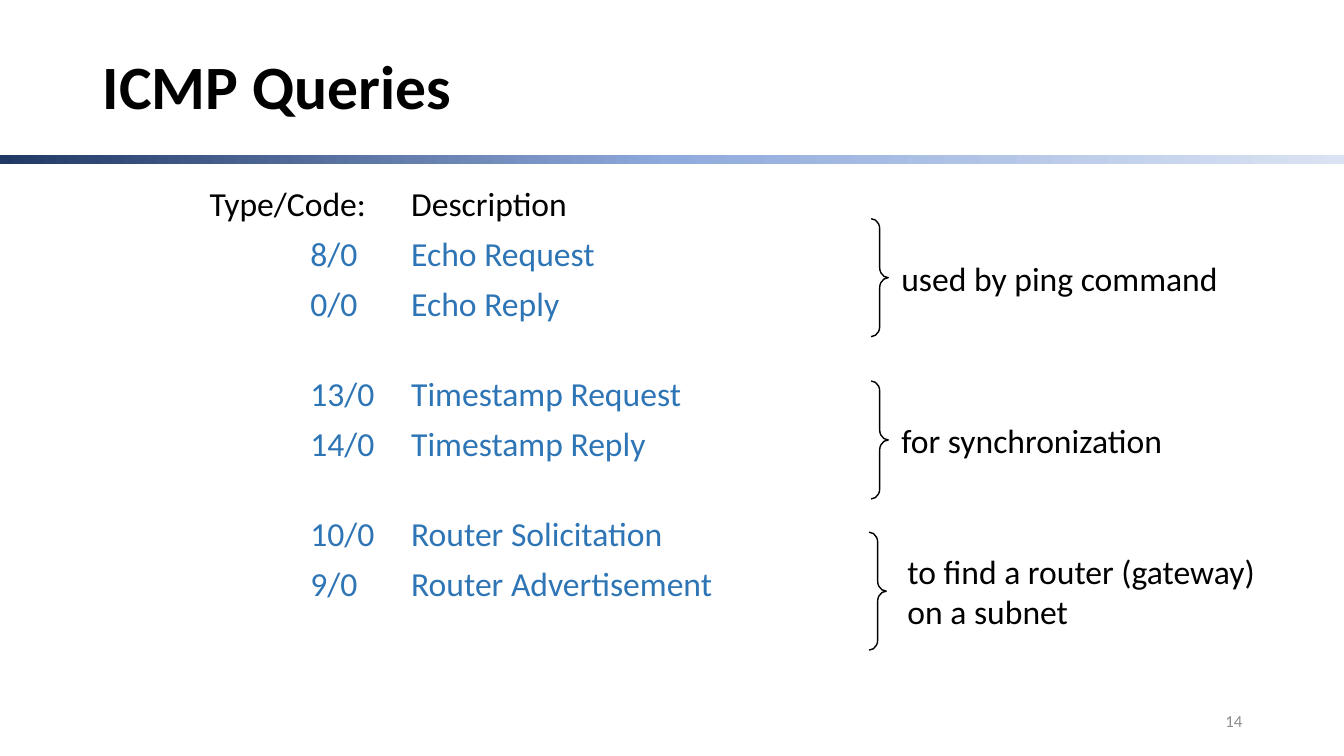
from copy import deepcopy
from dataclasses import dataclass

from pptx import Presentation
from pptx.dml.color import RGBColor
from pptx.enum.shapes import MSO_SHAPE
from pptx.enum.text import MSO_ANCHOR, PP_ALIGN
from pptx.oxml import parse_xml
from pptx.oxml.ns import nsdecls, qn
from pptx.util import Inches, Pt

RECTANGLE, RIGHT_BRACE = MSO_SHAPE.RECTANGLE, MSO_SHAPE.RIGHT_BRACE
TOP, MIDDLE = MSO_ANCHOR.TOP, MSO_ANCHOR.MIDDLE
LEFT, RIGHT = PP_ALIGN.LEFT, PP_ALIGN.RIGHT


@dataclass(frozen=True)
class Theme:
    """Colours, font and type sizes of the slide."""
    font: str = "Calibri"
    ink: str = "000000"
    query: str = "2E75B6"
    muted: str = "8C8C8C"
    band: tuple = ((0, "203864"), (0.5, "8FAADC"), (1, "DAE3F3"))
    title_size: int = 44
    body_size: int = 24
    number_size: int = 12


THEME = Theme()
QUERY_GROUPS = [
    [("8/0", "Echo Request"), ("0/0", "Echo Reply")],
    [("13/0", "Timestamp Request"), ("14/0", "Timestamp Reply")],
    [("10/0", "Router Solicitation"), ("9/0", "Router Advertisement")],
]
PURPOSES = [
    ((8.64, 2.17, 0.17, 1.17), 0.13, "used by ping command"),
    ((8.64, 3.78, 0.17, 1.17), 0.13, "for synchronization"),
    ((8.62, 5.28, 0.17, 1.17), 0.21, "to find a router (gateway)\non a subnet"),
]


def set_format(target, values):
    """Set every attribute named in a dict of format values."""
    for name, value in values.items():
        setattr(target, name, value)


def style_text(paragraph, size, color, bold=False):
    """Give a paragraph its font, size and colour."""
    set_format(paragraph.font, {"name": THEME.font, "size": Pt(size), "bold": bold})
    paragraph.font.color.rgb = RGBColor.from_string(color)


def add_text(slide, box, text, size, color, align=LEFT, anchor=MIDDLE):
    """Place a wrapped text box in the given box."""
    frame = slide.shapes.add_textbox(*map(Inches, box)).text_frame
    set_format(frame, {"word_wrap": True, "vertical_anchor": anchor, "text": text})
    for paragraph in frame.paragraphs:
        paragraph.alignment = align
        style_text(paragraph, size, color)
    return frame


def add_title(slide, box, text):
    """Move and format the title placeholder."""
    left, top, width, height = map(Inches, box)
    title = slide.shapes.title
    set_format(title, {"left": left, "top": top, "width": width, "height": height})
    set_format(title.text_frame, {"text": text, "vertical_anchor": MIDDLE, "word_wrap": True})
    heading = title.text_frame.paragraphs[0]
    set_format(heading, {"alignment": LEFT, "line_spacing": 0.9})
    style_text(heading, THEME.title_size, THEME.ink, bold=True)


def add_band(slide, box):
    """Draw the gradient band under the title."""
    band = slide.shapes.add_shape(RECTANGLE, *map(Inches, box))
    band.shadow.inherit = False
    band.line.fill.background()
    band.fill.gradient()
    band.fill.gradient_angle = 0
    stop_list = next(band._element.spPr.iter(qn("a:gsLst")))
    stop_list.append(deepcopy(stop_list[0]))
    for stop, (position, color) in zip(band.fill.gradient_stops, THEME.band):
        stop.position = position
        stop.color.rgb = RGBColor.from_string(color)


def add_queries(slide, box):
    """List the query types and descriptions on tab stops, in spaced groups."""
    rows = [("Type/Code:\tDescription", THEME.ink, 0)]
    for group_index, group in enumerate(QUERY_GROUPS):
        for row_index, (code, description) in enumerate(group):
            starts_later_group = group_index > 0 and row_index == 0
            rows.append((f"\t{code}\t{description}", THEME.query, 38 if starts_later_group else 10))
    listing = "\n".join(text for text, _, _ in rows)
    frame = add_text(slide, box, listing, THEME.body_size, THEME.ink, anchor=TOP)
    for paragraph, (_, color, gap) in zip(frame.paragraphs, rows):
        set_format(paragraph, {"line_spacing": 0.9, "space_before": Pt(gap)})
        style_text(paragraph, THEME.body_size, color)
        tabs = "".join(f'<a:tab pos="{Inches(stop)}" algn="l"/>' for stop in (1, 2))
        tab_list = parse_xml(f"<a:tabLst {nsdecls('a')}>{tabs}</a:tabLst>")
        properties = paragraph._p.get_or_add_pPr()
        properties.find(qn("a:spcBef")).addnext(tab_list)


def add_purpose(slide, box, gap, text):
    """Draw a brace in the box and its caption to the right."""
    left, top, width, height = box
    brace = slide.shapes.add_shape(RIGHT_BRACE, *map(Inches, box))
    brace.shadow.inherit = False
    brace.fill.background()
    brace.line.color.rgb = RGBColor.from_string(THEME.ink)
    brace.line.width = Pt(1)
    brace.adjustments[0], brace.adjustments[1] = 0.583, 0.5
    caption_box = (left + width + gap, top, 4, height)
    caption = add_text(slide, caption_box, text, THEME.body_size, THEME.ink)
    caption.margin_left = 0


def build_slide(presentation):
    """Build the ICMP queries slide."""
    slide = presentation.slides.add_slide(presentation.slide_layouts[5])
    add_band(slide, (0, 1.54, 13.33, 0.09))
    add_title(slide, (0.92, 0.4, 11.5, 0.97), "ICMP Queries")
    add_queries(slide, (1.98, 1.81, 6.3, 4.4))
    for box, gap, text in PURPOSES:
        add_purpose(slide, box, gap, text)
    add_text(slide, (9.42, 6.95, 3, 0.4), "14", THEME.number_size, THEME.muted, RIGHT)


def main():
    """Create the presentation and save it."""
    presentation = Presentation()
    set_format(presentation, {"slide_width": Inches(13.33), "slide_height": Inches(7.5)})
    build_slide(presentation)
    presentation.save("out.pptx")


if __name__ == "__main__":
    main()
